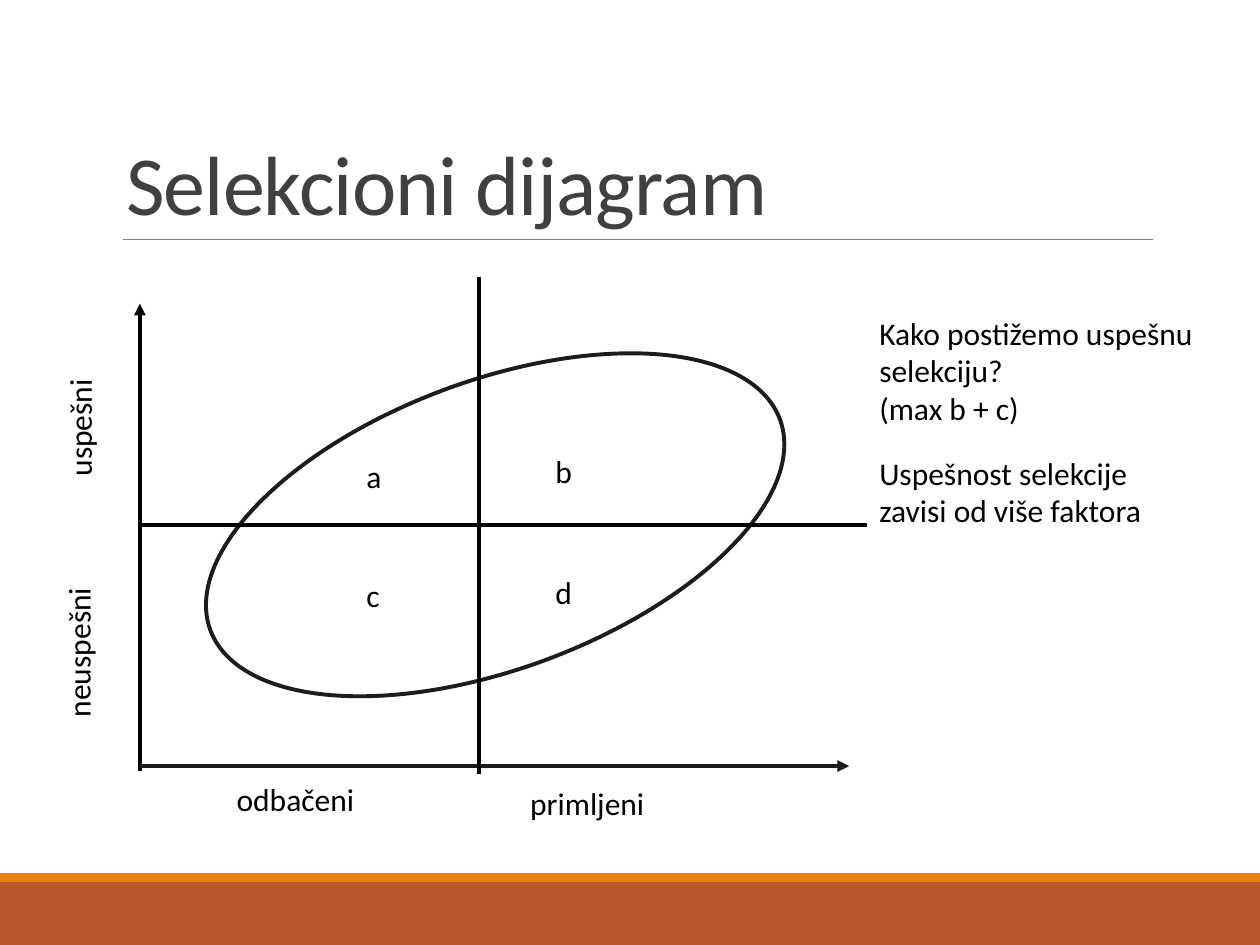
from pptx import Presentation
from pptx.dml.color import RGBColor
from pptx.enum.shapes import MSO_CONNECTOR, MSO_SHAPE
from pptx.enum.text import MSO_ANCHOR, PP_ALIGN
from pptx.oxml.ns import qn
from pptx.util import Inches, Pt
from lxml import etree

STRAIGHT = MSO_CONNECTOR.STRAIGHT
RECT, OVAL = MSO_SHAPE.RECTANGLE, MSO_SHAPE.OVAL
BOTTOM, LEFT = MSO_ANCHOR.BOTTOM, PP_ALIGN.LEFT
TITLE_ONLY = 5

FONT = "Calibri"
BLACK, DARK, GREY, TITLE_GREY = "000000", "1C1C1C", "808080", "404040"
RUST, ORANGE = "BD582C", "E48312"


def rgb(value):
    return RGBColor.from_string(value)


class SlideBuilder:
    def __init__(self, slide, font):
        self.s = slide
        self.font = font

    def add_run(self, p, text, size, color):
        r = p.add_run()
        r.text = text
        r.font.name = self.font
        r.font.size = Pt(size)
        r.font.color.rgb = rgb(color)
        return r

    def title(self, text, x, y, w, h):
        sp = self.s.shapes.title
        sp.left, sp.top, sp.width, sp.height = map(Inches, (x, y, w, h))
        tf = sp.text_frame
        tf.word_wrap = True
        tf.vertical_anchor = BOTTOM
        p = tf.paragraphs[0]
        p.alignment = LEFT
        p.line_spacing = 0.85
        r = self.add_run(p, text, 48, TITLE_GREY)
        r.font._element.set("spc", "-50")

    def shape(self, kind, x, y, w, h, fill=None, line=None, rotation=0):
        sp = self.s.shapes.add_shape(kind, *map(Inches, (x, y, w, h)))
        sp.shadow.inherit = False
        sp.rotation = rotation
        if fill:
            sp.fill.solid()
            sp.fill.fore_color.rgb = rgb(fill)
        else:
            sp.fill.background()
        if line:
            sp.line.color.rgb = rgb(line)
            sp.line.width = Pt(2.25)
        else:
            sp.line.fill.background()

    def line(self, x1, y1, x2, y2, color=BLACK, width=2.25, arrow=False):
        c = self.s.shapes.add_connector(STRAIGHT, *map(Inches, (x1, y1, x2, y2)))
        c.line.color.rgb = rgb(color)
        c.line.width = Pt(width)
        if arrow:
            ln = c.line._get_or_add_ln()
            etree.SubElement(ln, qn("a:tailEnd"), type="triangle")
        etree.SubElement(c._element.spPr, qn("a:effectLst"))

    def text(self, paragraphs, x, y, w, h=0.4, rotation=0):
        sp = self.s.shapes.add_textbox(*map(Inches, (x, y, w, h)))
        sp.rotation = rotation
        tf = sp.text_frame
        tf.word_wrap = True
        for i, text in enumerate(paragraphs):
            p = tf.add_paragraph() if i else tf.paragraphs[0]
            self.add_run(p, text, 18, BLACK)


def main():
    prs = Presentation()
    prs.slide_width, prs.slide_height = Inches(10), Inches(7.5)
    b = SlideBuilder(prs.slides.add_slide(prs.slide_layouts[TITLE_ONLY]), FONT)

    b.shape(RECT, 0, 7, 10, 0.5, fill=RUST)
    b.shape(RECT, 0, 6.93, 10, 0.07, fill=ORANGE)
    b.line(0.98, 1.9, 9.15, 1.9, GREY, 0.5)
    b.title("Selekcioni dijagram", 0.9, 0.31, 8.25, 1.59)

    # Score cloud, axes and the two cut-off lines
    axis_x = 1.11
    b.shape(OVAL, 1.52, 3.02, 4.82, 2.29, line=DARK, rotation=339.7)
    b.line(axis_x, 6.12, axis_x, 2.41, arrow=True)
    b.line(axis_x, 6.08, 6.74, 6.08, DARK, arrow=True)
    b.line(3.8, 2.2, 3.8, 6.14)
    b.line(6.88, 4.17, axis_x, 4.17)

    for label, x, y, rotation in (
        ("odbačeni", 1.78, 6.14, 0),
        ("primljeni", 4.11, 6.17, 0),
        ("neuspešni", -0.05, 4.92, 270),
        ("uspešni", -0.04, 3.01, 270),
    ):
        b.text([label], x, y, 1.34, rotation=rotation)

    for label, x, y in (
        ("a", 2.81, 3.58), ("b", 4.31, 3.54),
        ("c", 2.81, 4.52), ("d", 4.31, 4.5),
    ):
        b.text([label], x, y, 0.44)

    b.text(["Kako postižemo uspešnu selekciju?", "(max b + c)"], 6.88, 2.44, 2.69, 1.01)
    b.text(["Uspešnost selekcije zavisi od više faktora"], 6.88, 3.55, 2.69, 0.71)

    prs.save("out.pptx")


if __name__ == "__main__":
    main()
